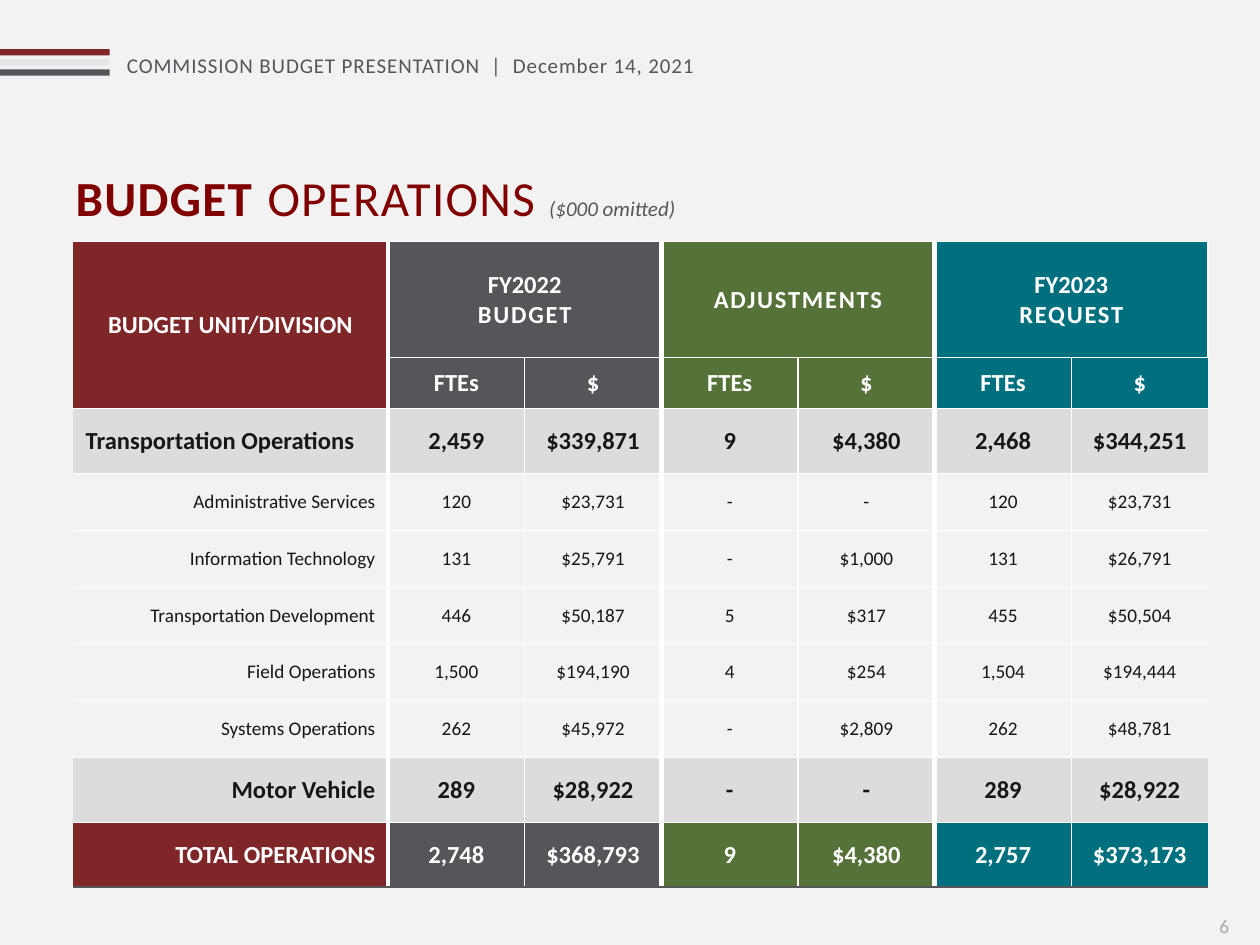
"""Build the operations budget slide with its request table."""
from lxml import etree
from pptx import Presentation
from pptx import util as u
from pptx.dml.color import RGBColor
from pptx.enum import shapes, text
from pptx.oxml.ns import qn

COLORS = {
    "page": "F2F2F2", "maroon": "7F2629", "title": "800000", "gray": "54565A",
    "silver": "E7E6E6", "green": "557238", "teal": "00707F", "band": "DCDCDD",
    "ink": "181717", "white": "FFFFFF", "number": "A7A8A9", "header": "55565A",
}
FONT = "Calibri"
STRIPES = ["maroon", "silver", "gray"]
GROUPS = [
    ([("FY2022", 0), ("BUDGET", 1)], "gray"),
    ([("ADJUSTMENTS", 1)], "green"),
    ([("FY2023", 0), ("REQUEST", 1)], "teal"),
]
MEASURES = ["FTEs", "$"]
ROWS = [
    ("band", "Transportation Operations", "2,459", "$339,871", "9", "$4,380", "2,468", "$344,251"),
    ("plain", "Administrative Services", "120", "$23,731", "-", "-", "120", "$23,731"),
    ("plain", "Information Technology", "131", "$25,791", "-", "$1,000", "131", "$26,791"),
    ("plain", "Transportation Development", "446", "$50,187", "5", "$317", "455", "$50,504"),
    ("plain", "Field Operations", "1,500", "$194,190", "4", "$254", "1,504", "$194,444"),
    ("plain", "Systems Operations", "262", "$45,972", "-", "$2,809", "262", "$48,781"),
    ("band", "Motor Vehicle", "289", "$28,922", "-", "-", "289", "$28,922"),
    ("total", "TOTAL OPERATIONS", "2,748", "$368,793", "9", "$4,380", "2,757", "$373,173"),
]
TABLE = (0.58, 1.92, 9.01, 5.12)
LABEL_WIDTH = 2.5
HEADER_HEIGHTS = [0.92, 0.4]
ROW_HEIGHTS = {"band": 0.52, "plain": 0.45, "total": 0.51}
THICK, THIN = 3, 0.75
ALIGN = text.PP_ALIGN


def inches(*values):
    return [u.Inches(value) for value in values]


def rgb(name):
    return RGBColor.from_string(COLORS[name])


def add_span(para, words, size, color, bold=False, italic=False, spacing=0):
    span = para.add_run()
    span.text = words
    font = span.font
    font.name, font.size, font.bold, font.italic = FONT, u.Pt(size), bold, italic
    font.color.rgb = rgb(color)
    if spacing:
        font._element.set("spc", str(int(spacing * 100)))


def add_label(page, place, words, size, color, spacing=0):
    frame = page.shapes.add_textbox(*inches(*place)).text_frame
    frame.word_wrap = True
    add_span(frame.paragraphs[0], words, size, color, spacing=spacing)


def set_borders(cell, column, last_column, last_row):
    left = None if column == 0 else THICK if column % 2 else THIN
    right = None if column == last_column else THIN if column % 2 else THICK
    bottom = ("gray", 1) if last_row else ("white", THIN)
    sides = [("L", "white", left), ("R", "white", right), ("T", "white", THIN), ("B", *bottom)]
    props = cell._tc.get_or_add_tcPr()
    for index, (side, color, width) in enumerate(sides):
        line = etree.Element(qn(f"a:ln{side}"), w=str(u.Pt(width or 0)))
        if width:
            fill = etree.SubElement(line, qn("a:solidFill"))
            etree.SubElement(fill, qn("a:srgbClr"), val=COLORS[color])
        else:
            etree.SubElement(line, qn("a:noFill"))
        props.insert(index, line)


def fill_cell(cell, lines, color, fill, align=ALIGN.CENTER, size=14, bold=True, margin=0.05):
    cell.vertical_anchor = text.MSO_ANCHOR.MIDDLE
    cell.margin_left = cell.margin_right = u.Inches(margin)
    if fill:
        cell.fill.solid()
        cell.fill.fore_color.rgb = rgb(fill)
    else:
        cell.fill.background()
    frame = cell.text_frame
    for index, (words, spacing) in enumerate(lines):
        para = frame.add_paragraph() if index else frame.paragraphs[0]
        para.alignment = align
        add_span(para, words, size, color, bold, spacing=spacing)


def add_budget_table(page):
    heights = HEADER_HEIGHTS + [ROW_HEIGHTS[row[0]] for row in ROWS]
    columns = 1 + len(GROUPS) * len(MEASURES)
    frame = page.shapes.add_table(len(heights), columns, *inches(*TABLE))
    table = frame.table
    table.first_row = table.horz_banding = False
    for row, height in zip(table.rows, heights):
        row.height = u.Inches(height)
    measure_width = (TABLE[2] - LABEL_WIDTH) / (columns - 1)
    for index, column in enumerate(table.columns):
        column.width = u.Inches(measure_width if index else LABEL_WIDTH)

    table.cell(0, 0).merge(table.cell(1, 0))
    fill_cell(table.cell(0, 0), [("BUDGET UNIT/DIVISION", 0)], "white", "maroon", margin=0.1)
    for index, (lines, color) in enumerate(GROUPS):
        first = 1 + index * len(MEASURES)
        table.cell(0, first).merge(table.cell(0, first + 1))
        fill_cell(table.cell(0, first), lines, "white", color)
        for offset, measure in enumerate(MEASURES):
            fill_cell(table.cell(1, first + offset), [(measure, 0)], "white", color)

    column_fills = ["maroon"] + [color for _, color in GROUPS for _ in MEASURES]
    for number, (kind, *values) in enumerate(ROWS):
        size = 11 if kind == "plain" else 14
        color = "white" if kind == "total" else "ink"
        for column, value in enumerate(values):
            fill = {"band": "band", "plain": None, "total": column_fills[column]}[kind]
            label_align = ALIGN.RIGHT if number else ALIGN.LEFT
            align = ALIGN.CENTER if column else label_align
            fill_cell(table.cell(number + len(HEADER_HEIGHTS), column), [(value, 0)], color, fill,
                      align, size, kind != "plain", 0.05 if column else 0.1)

    for row in range(len(heights)):
        for column in range(columns):
            set_borders(table.cell(row, column), column, columns - 1, row == len(heights) - 1)


def add_title(page):
    title = page.shapes.title
    title.left, title.top, title.width, title.height = inches(0.5, 1.22, 9.01, 0.64)
    frame = title.text_frame
    frame.auto_size = text.MSO_AUTO_SIZE.NONE
    frame.vertical_anchor = text.MSO_ANCHOR.TOP
    para = frame.paragraphs[0]
    para.alignment = ALIGN.LEFT
    add_span(para, "BUDGET", 28, "title", bold=True, spacing=0.8)
    add_span(para, " ", 32, "title", bold=True, spacing=0.8)
    add_span(para, "OPERATIONS ", 28, "title", spacing=0.8)
    add_span(para, "($000 omitted)", 12, "gray", italic=True)


def main():
    deck = Presentation()
    deck.slide_width, deck.slide_height = inches(10, 7.5)
    page = deck.slides.add_slide(deck.slide_layouts[5])
    page.background.fill.solid()
    page.background.fill.fore_color.rgb = rgb("page")
    add_label(page, (0.91, 0.37, 4.84, 0.5),
              "COMMISSION BUDGET PRESENTATION  |  December 14, 2021", 12, "header", 0.5)
    for index, color in enumerate(STRIPES):
        box = page.shapes.add_shape(shapes.MSO_SHAPE.RECTANGLE,
                                    *inches(0, 0.39 + index * 0.08, 0.87, 0.05))
        box.shadow.inherit = False
        box.fill.solid()
        box.fill.fore_color.rgb = rgb(color)
        box.line.fill.background()
    add_title(page)
    add_label(page, (9.58, 7.21, 0.42, 0.4), "6", 11, "number")
    add_budget_table(page)
    deck.save("out.pptx")


if __name__ == "__main__":
    main()
